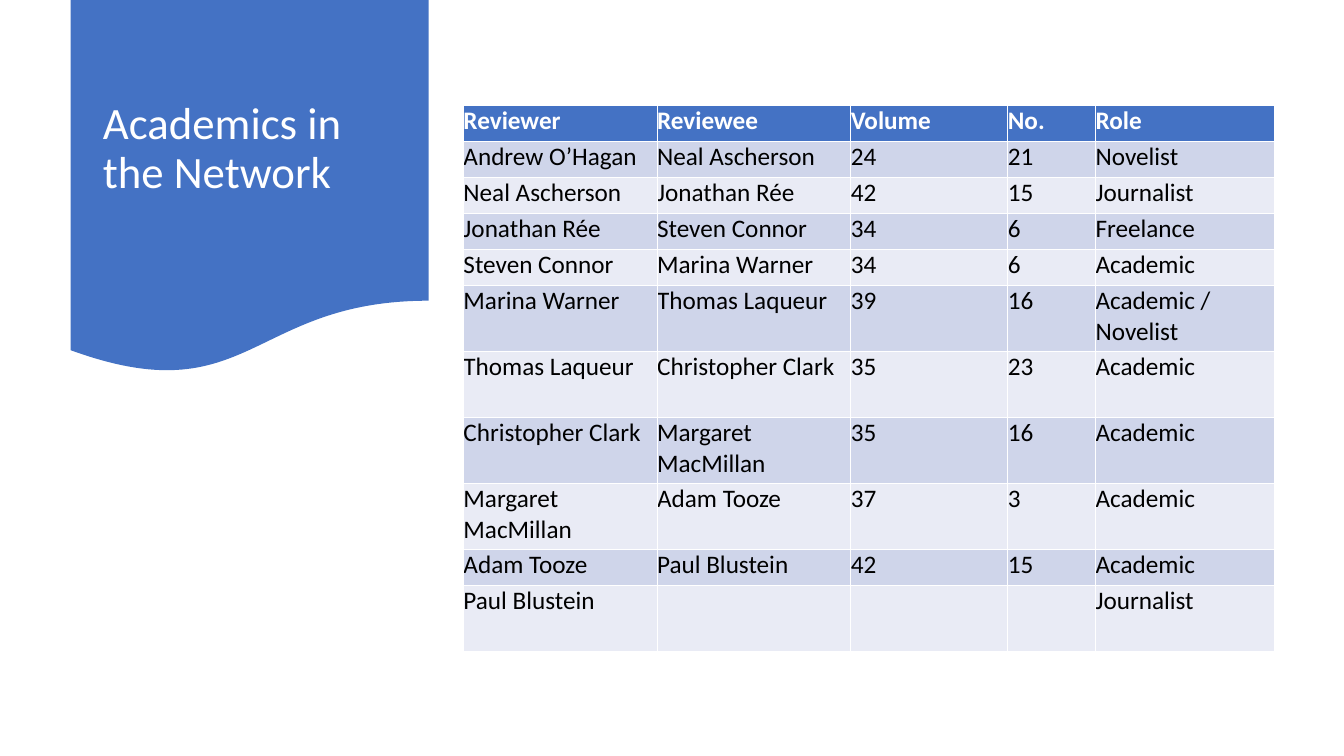
from pptx import Presentation
from pptx.dml.color import RGBColor
from pptx.enum.shapes import MSO_SHAPE
from pptx.enum.text import MSO_ANCHOR, MSO_AUTO_SIZE, PP_ALIGN
from pptx.util import Cm, Pt

TITLE = "Academics in the Network"
ROWS = [
    ("Reviewer", "Reviewee", "Volume", "No.", "Role"),
    ("Andrew O’Hagan", "Neal Ascherson", "24", "21", "Novelist"),
    ("Neal Ascherson", "Jonathan Rée", "42", "15", "Journalist"),
    ("Jonathan Rée", "Steven Connor", "34", "6", "Freelance"),
    ("Steven Connor", "Marina Warner", "34", "6", "Academic"),
    ("Marina Warner", "Thomas Laqueur", "39", "16", "Academic / Novelist"),
    ("Thomas Laqueur", "Christopher Clark", "35", "23", "Academic"),
    ("Christopher Clark", "Margaret MacMillan", "35", "16", "Academic"),
    ("Margaret MacMillan", "Adam Tooze", "37", "3", "Academic"),
    ("Adam Tooze", "Paul Blustein", "42", "15", "Academic"),
    ("Paul Blustein", "", "", "", "Journalist"),
]
COL_WIDTHS = [4.88, 4.88, 3.96, 2.21, 4.5]
TALL_ROWS = {5, 6, 7, 8, 10}
ROW_HEIGHTS = [1.66 if i in TALL_ROWS else 0.91 for i in range(len(ROWS))]

FONT = "Calibri"
BLUE = RGBColor(0x44, 0x72, 0xC4)
BAND_DARK = RGBColor(0xCF, 0xD5, 0xEA)
BAND_LIGHT = RGBColor(0xE9, 0xEB, 0xF5)
WHITE = RGBColor(0xFF, 0xFF, 0xFF)
BLACK = RGBColor(0, 0, 0)
WAVE = MSO_SHAPE.FLOWCHART_DOCUMENT
MIDDLE = MSO_ANCHOR.MIDDLE
NO_FIT = MSO_AUTO_SIZE.NONE
LEFT = PP_ALIGN.LEFT


def write(tf, text, size=18, color=BLACK, bold=False, spacing=1.0):
    p = tf.paragraphs[0]
    p.alignment = LEFT
    p.line_spacing = spacing
    p.font.size = Pt(size)
    if text:
        r = p.add_run()
        r.text = text
        r.font.name = FONT
        r.font.size = Pt(size)
        r.font.bold = bold
        r.font.color.rgb = color


def add_banner(slide):
    sp = slide.shapes.add_shape(WAVE, Cm(1.78), Cm(0), Cm(9.02), Cm(9.45))
    sp.shadow.inherit = False
    sp.fill.solid()
    sp.fill.fore_color.rgb = BLUE
    sp.line.fill.background()
    slide.shapes.title._element.addprevious(sp._element)


def add_title(slide):
    title = slide.shapes.title
    title.left, title.top = Cm(2.34), Cm(0.48)
    title.width, title.height = Cm(7.9), Cm(6.58)
    tf = title.text_frame
    tf.word_wrap = True
    tf.auto_size = NO_FIT
    tf.vertical_anchor = MIDDLE
    write(tf, TITLE, size=32, color=WHITE, spacing=0.9)


def add_reviews(slide):
    table = slide.shapes.add_table(
        len(ROWS), len(COL_WIDTHS), Cm(11.68), Cm(2.65),
        Cm(sum(COL_WIDTHS)), Cm(sum(ROW_HEIGHTS))).table
    for column, width in zip(table.columns, COL_WIDTHS):
        column.width = Cm(width)
    for i, (row, height) in enumerate(zip(table.rows, ROW_HEIGHTS)):
        row.height = Cm(height)
        header = i == 0
        band = BLUE if header else BAND_DARK if i % 2 else BAND_LIGHT
        for cell, text in zip(row.cells, ROWS[i]):
            cell.margin_left = cell.margin_right = Cm(0)
            cell.margin_top = cell.margin_bottom = Cm(0)
            cell.fill.solid()
            cell.fill.fore_color.rgb = band
            write(cell.text_frame, text, bold=header,
                  color=WHITE if header else BLACK)


def main():
    prs = Presentation()
    prs.slide_width, prs.slide_height = Cm(33.87), Cm(19.05)
    slide = prs.slides.add_slide(prs.slide_layouts[5])
    add_banner(slide)
    add_title(slide)
    add_reviews(slide)
    prs.save("out.pptx")


if __name__ == "__main__":
    main()
